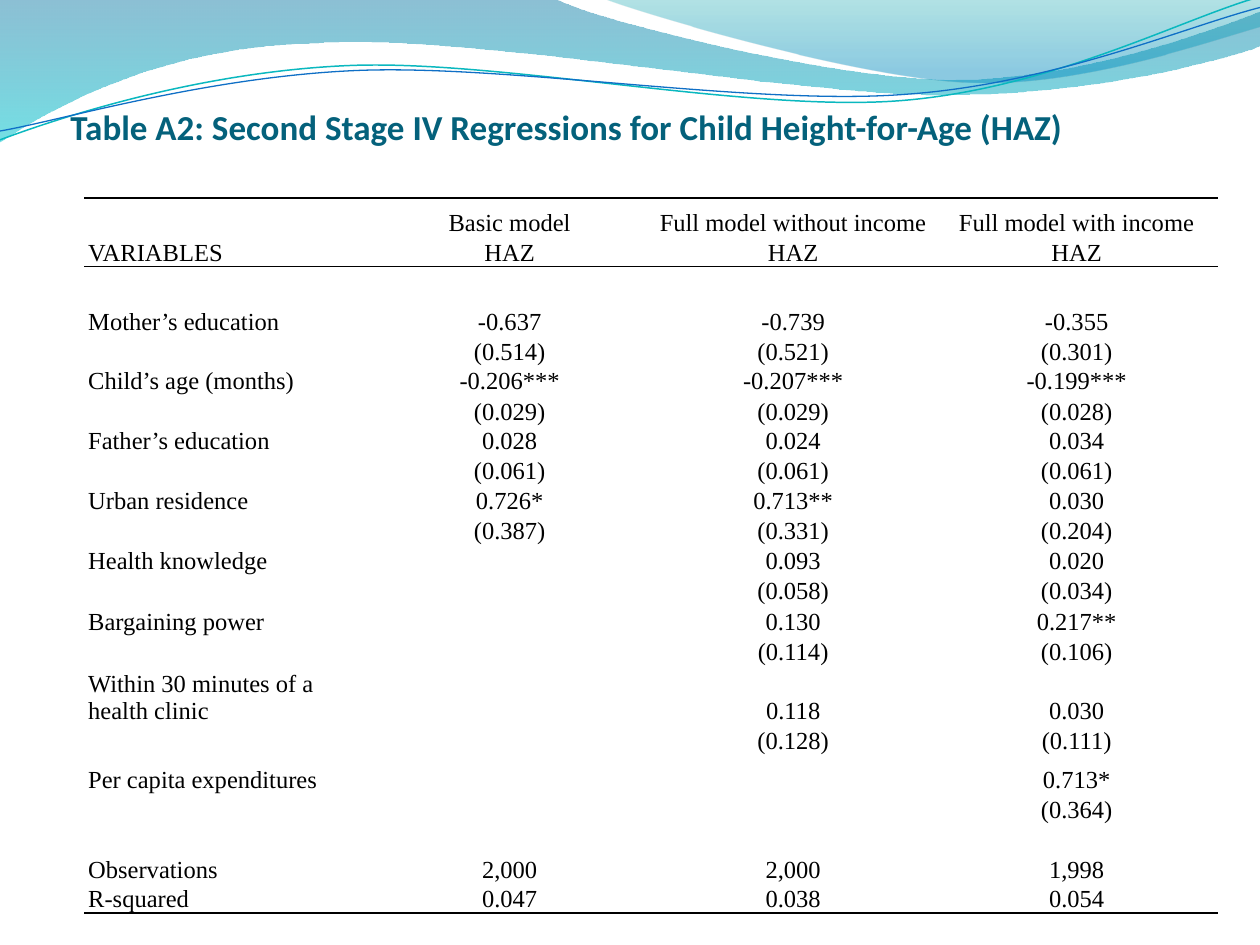
import math

import lxml.etree
import pptx
import pptx.dml.color
import pptx.enum.text
import pptx.oxml.ns
import pptx.util

Inches, Pt = pptx.util.Inches, pptx.util.Pt
qn = pptx.oxml.ns.qn
SubElement = lxml.etree.SubElement
ANCHOR, ALIGN = pptx.enum.text.MSO_ANCHOR, pptx.enum.text.PP_ALIGN


def color(value):
    return pptx.dml.color.RGBColor.from_string(value)


def add_curve(shapes, start, segments, close):
    """Draw a path in inches; a segment is one point or three Bezier points."""
    points = [(Inches(x), Inches(y)) for x, y in [start, *sum(segments, [])]]
    builder = shapes.build_freeform(*points[0])
    builder.add_line_segments(points[1:], close=close)
    sp = builder.convert_to_shape()
    sp.shadow.inherit = False
    nodes = iter(list(sp._element.iter(qn("a:lnTo"))))
    for segment in segments:
        first = next(nodes)
        if len(segment) == 3:
            first.tag = qn("a:cubicBezTo")
            for _ in range(2):
                node = next(nodes)
                first.append(node[0])
                node.getparent().remove(node)
    return sp


prs = pptx.Presentation()
prs.slide_width, prs.slide_height = Inches(10), Inches(7.5)
s = prs.slides.add_slide(prs.slide_layouts[6])

# Translucent waves across the top: start, segments, (position, colour, opacity)
waves = [
    ((0, 0), [
        [(4.4, -0.01)],
        [(4.76, 0.17), (6.64, 0.63), (7.58, 0.63)],
        [(8.53, 0.63), (9.58, 0.26), (10, 0.09)],
        [(10.01, 0.36)],
        [(9.83, 0.44), (8.7, 0.76), (7.46, 0.75)],
        [(6.22, 0.75), (3.82, 0.28), (2.57, 0.34)],
        [(1.29, 0.36), (0.46, 0.83), (-0.01, 1.13)],
    ], [(0, "0074A1", 45), (1, "00C6CF", 55)]),
    ((4.79, -0.01), [
        [(5.09, 0.11), (6.82, 0.62), (7.69, 0.65)],
        [(8.56, 0.69), (9.61, 0.32), (10, 0.21)],
        [(10, 0)],
    ], [(0, "00A1A9", 30), (0.8, "008BBF", 45)]),
]
for start, segments, stops in waves:
    sp = add_curve(s.shapes, start, segments, True)
    sp.line.fill.background()
    sp.fill.gradient()
    sp.fill.gradient_angle = 270
    for stop, (position, value, _) in zip(sp.fill.gradient_stops, stops):
        stop.position = position
        stop.color.rgb = color(value)
    for clr, (_, _, opacity) in zip(sp._element.spPr.iter(qn("a:srgbClr")), stops):
        SubElement(clr, qn("a:alpha"), val=str(opacity * 1000))

# Thin wave lines, tilted about their centre
wave_lines = [
    ((0, 1.11), [
        [(0.48, 0.93), (1.58, 0.57), (2.77, 0.52)],
        [(3.95, 0.47), (5.93, 0.89), (7.13, 0.8)],
        [(8.33, 0.71), (9.38, 0.15), (9.98, -0.02)],
    ], (4.99, 0.58), "0AB8BF", 0.85),
    ((0, 1.04), [
        [(0.47, 0.96), (1.64, 0.61), (2.83, 0.56)],
        [(4.03, 0.51), (5.97, 0.84), (7.17, 0.75)],
        [(8.36, 0.67), (9.41, 0.21), (10, 0.06)],
    ], (5, 0.59), "0F6FC6", 0.75),
]
TILT = 2.7
cos, sin = math.cos(math.radians(TILT)), math.sin(math.radians(TILT))
for start, segments, (cx, cy), value, width in wave_lines:
    level = [[(cx + (x - cx) * cos - (y - cy) * sin, cy + (x - cx) * sin + (y - cy) * cos)
              for x, y in segment] for segment in [[start], *segments]]
    sp = add_curve(s.shapes, level[0][0], level[1:], False)
    sp.rotation = 360 - TILT
    sp.fill.background()
    sp.line.color.rgb = color(value)
    sp.line.width = Pt(width)

# Title
tf = s.shapes.add_textbox(Inches(0.5), Inches(0.75), Inches(9), Inches(0.75)).text_frame
tf.word_wrap = True
tf.vertical_anchor = ANCHOR.BOTTOM
tf.margin_left, tf.margin_right = Inches(0.06), 0
tf.margin_top, tf.margin_bottom = Inches(0.05), Inches(0.33)
r = tf.paragraphs[0].add_run()
r.text = "Table A2: Second Stage IV Regressions for Child Height-for-Age (HAZ)"
r.font.name, r.font.size, r.font.bold = "Calibri", Pt(20), True
r.font.color.rgb = color("04617B")

# Regression table
rows = [
    ("", "", "", ""),
    ("", "Basic model", "Full model without income", "Full model with income"),
    ("VARIABLES", "HAZ", "HAZ", "HAZ"),
    ("", "", "", ""),
    ("Mother’s education", "-0.637", "-0.739", "-0.355"),
    ("", "(0.514)", "(0.521)", "(0.301)"),
    ("Child’s age (months)", "-0.206***", "-0.207***", "-0.199***"),
    ("", "(0.029)", "(0.029)", "(0.028)"),
    ("Father’s education", "0.028", "0.024", "0.034"),
    ("", "(0.061)", "(0.061)", "(0.061)"),
    ("Urban residence", "0.726*", "0.713**", "0.030"),
    ("", "(0.387)", "(0.331)", "(0.204)"),
    ("Health knowledge", "", "0.093", "0.020"),
    ("", "", "(0.058)", "(0.034)"),
    ("Bargaining power", "", "0.130", "0.217**"),
    ("", "", "(0.114)", "(0.106)"),
    ("Within 30 minutes of a health clinic", "", "0.118", "0.030"),
    ("", "", "(0.128)", "(0.111)"),
    ("Per capita expenditures", "", "", "0.713*"),
    ("", "", "", "(0.364)"),
    ("", "", "", ""),
    ("Observations", "2,000", "2,000", "1,998"),
    ("R-squared", "0.047", "0.038", "0.054"),
]
tall_rows = {1: 0.31, 4: 0.31, 16: 0.43, 18: 0.31}
ruled_rows = (0, 2, len(rows) - 1)
heights = [tall_rows.get(i, 0.21 if all(row) else 0.24) for i, row in enumerate(rows)]

frame = s.shapes.add_table(len(rows), 4, Inches(0.67), Inches(1.33),
                           Inches(9), Inches(sum(heights)))
table = frame.table
table.first_row = table.horz_banding = False
NO_STYLE = "{2D5ABB26-0587-4C30-8999-92F81FD0307C}"
table._tbl.tblPr.find(qn("a:tableStyleId")).text = NO_STYLE

for i, (row, height) in enumerate(zip(rows, heights)):
    table.rows[i].height = Inches(height)
    for j, text in enumerate(row):
        cell = table.cell(i, j)
        cell.fill.background()
        cell.vertical_anchor = ANCHOR.BOTTOM
        cell.margin_left = cell.margin_right = Inches(0.03)
        cell.margin_top = cell.margin_bottom = 0
        p = cell.text_frame.paragraphs[0]
        p.alignment = ALIGN.CENTER if j else ALIGN.LEFT
        if text:
            r = p.add_run()
            r.text = text
            r.font.name, r.font.size = "Times New Roman", Pt(14)
            r.font.color.rgb = color("000000")
        end = SubElement(p._p, qn("a:endParaRPr"), sz="1400" if text else "1000")
        SubElement(end, qn("a:latin"), typeface="Times New Roman")
        if i in ruled_rows:
            tcPr = cell._tc.get_or_add_tcPr()
            ln = SubElement(tcPr, qn("a:lnB"), w=str(Pt(1)))
            fill = SubElement(ln, qn("a:solidFill"))
            SubElement(fill, qn("a:srgbClr"), val="000000")
            tcPr.insert(0, ln)

prs.save("out.pptx")
